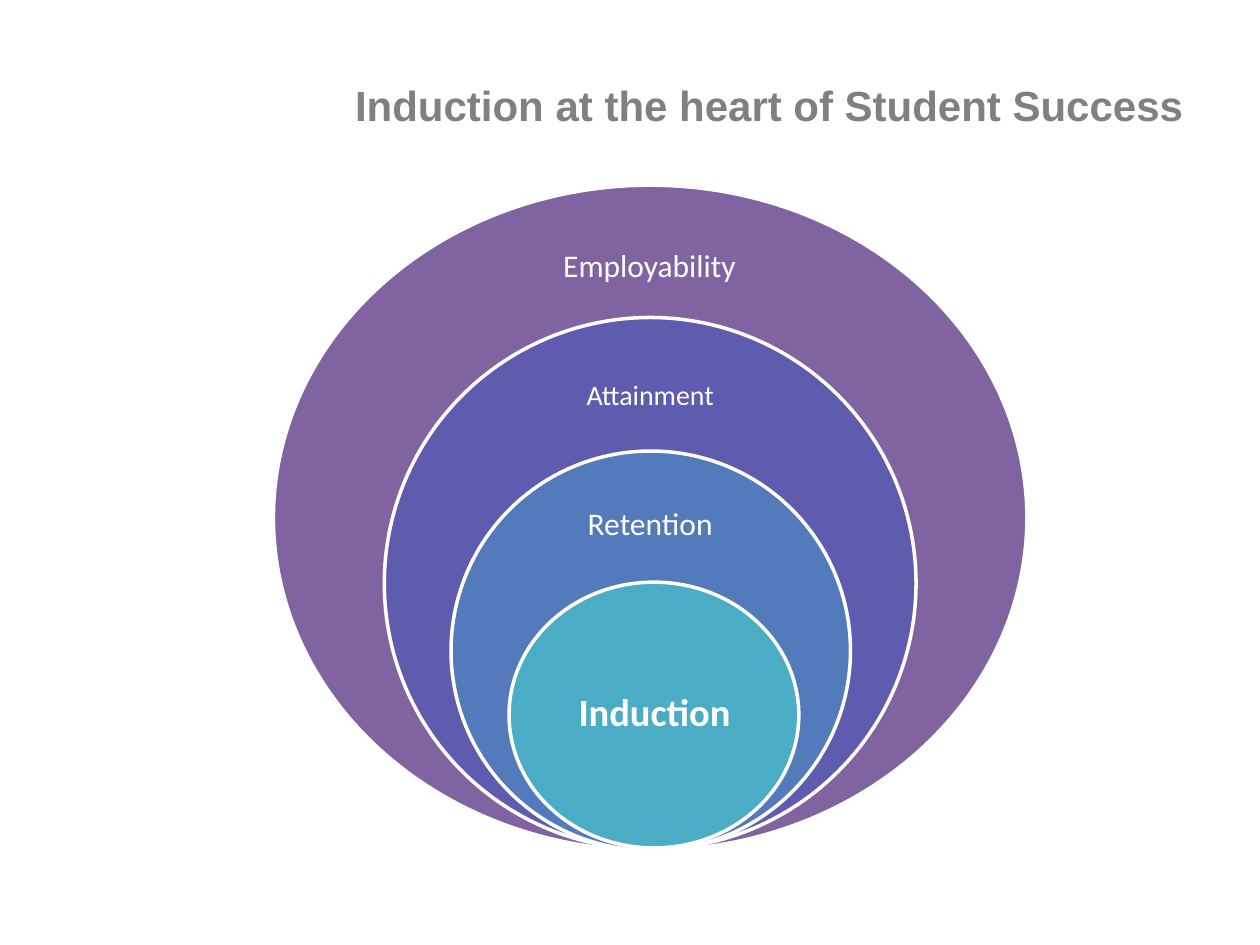
from pptx import Presentation
from pptx.dml.color import RGBColor
from pptx.enum.shapes import MSO_SHAPE
from pptx.enum.text import MSO_ANCHOR, PP_ALIGN
from pptx.util import Inches, Pt

OVAL = MSO_SHAPE.OVAL
MIDDLE = MSO_ANCHOR.MIDDLE
LEFT, CENTER = PP_ALIGN.LEFT, PP_ALIGN.CENTER

COLORS = {
    "title": "808080",
    "white": "FFFFFF",
    "employability": "8064A2",
    "attainment": "5F5BAE",
    "retention": "537ABA",
    "induction": "4BACC6",
}


def add_text(slide, text, box, *, size, color="white", font="Calibri", bold=False,
             align=CENTER, inset=None, line_spacing=None):
    """Box is left, top, width, height in inches; inset applies to all four sides."""
    shape = slide.shapes.add_textbox(*map(Inches, box))
    frame = shape.text_frame
    frame.word_wrap = True
    frame.vertical_anchor = MIDDLE
    if inset is not None:
        frame.margin_left = frame.margin_right = Inches(inset)
        frame.margin_top = frame.margin_bottom = Inches(inset)
    paragraph = frame.paragraphs[0]
    paragraph.alignment = align
    if line_spacing is not None:
        paragraph.line_spacing = line_spacing
    run = paragraph.add_run()
    run.text = text
    run.font.name = font
    run.font.size = Pt(size)
    run.font.bold = bold
    run.font.color.rgb = RGBColor.from_string(COLORS[color])


presentation = Presentation()
presentation.slide_width = Inches(10)
presentation.slide_height = Inches(7.5)
slide = presentation.slides.add_slide(presentation.slide_layouts[6])

add_text(slide, "Induction at the heart of Student Success", (2.72, 0.36, 9, 0.94),
         size=24, color="title", font="Arial", bold=True, align=LEFT)

# Outermost ring first: name, ring box, label box, text size, inset, bold
rings = [
    ("Employability", (2.17, 1.47, 5.98, 5.28), (4.32, 1.73, 1.67, 0.79), 18, 0.14, False),
    ("Attainment", (3.05, 2.52, 4.22, 4.22), (4.42, 2.77, 1.48, 0.76), 16, 0.12, False),
    ("Retention", (3.58, 3.58, 3.17, 3.17), (4.42, 3.81, 1.48, 0.71), 18, 0.14, False),
    ("Induction", (4.04, 4.62, 2.3, 2.11), (4.38, 5.14, 1.63, 1.06), 22, 0.17, True),
]
for name, ring_box, label_box, size, inset, bold in rings:
    ring = slide.shapes.add_shape(OVAL, *map(Inches, ring_box))
    ring.shadow.inherit = False
    ring.fill.solid()
    ring.fill.fore_color.rgb = RGBColor.from_string(COLORS[name.lower()])
    ring.line.color.rgb = RGBColor.from_string(COLORS["white"])
    ring.line.width = Pt(2)
    add_text(slide, name, label_box, size=size, bold=bold, inset=inset, line_spacing=0.9)

presentation.save("out.pptx")
